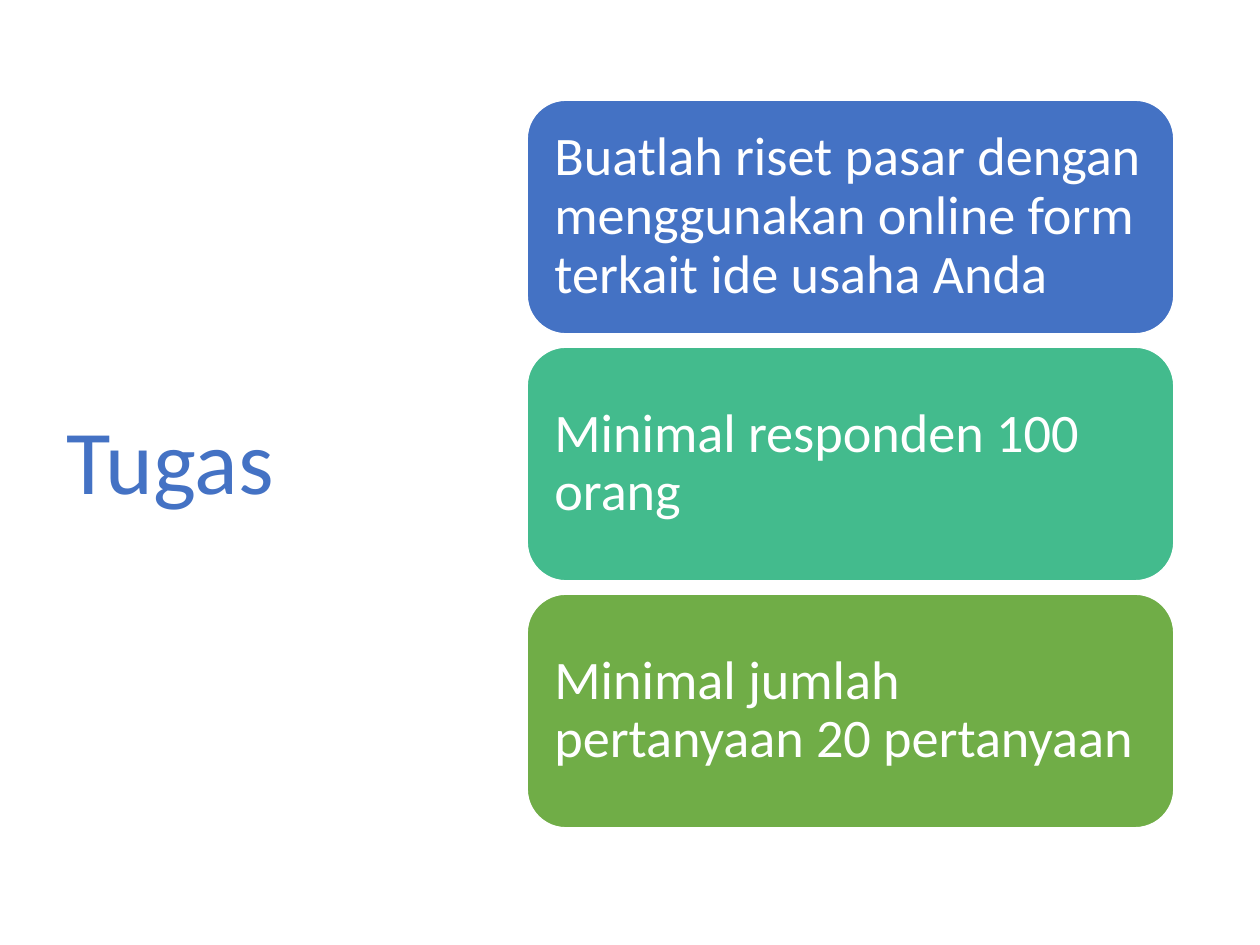
from dataclasses import dataclass
from pptx import Presentation
from pptx.dml.color import RGBColor
from pptx.enum.shapes import MSO_SHAPE
from pptx.enum.text import MSO_ANCHOR, PP_ALIGN
from pptx.util import Emu, Pt

TITLE = "Tugas"
TASKS = [
    ("Buatlah riset pasar dengan menggunakan online form terkait ide usaha Anda", "4472C4"),
    ("Minimal responden 100 orang", "43BB8D"),
    ("Minimal jumlah pertanyaan 20 pertanyaan", "70AD47"),
]


@dataclass(frozen=True)
class Theme:
    font: str = "Calibri"
    title_color: str = "4472C4"
    light: str = "FFFFFF"
    title_size: int = 52
    task_size: int = 31


THEME = Theme()
SLIDE_W, SLIDE_H = 1260, 945
TITLE_BOX = (54, 86, 393, 758)
CARD_X, CARD_Y, CARD_W, CARD_H, CARD_GAP = 527, 100, 647, 234, 13
CARD_INSET, TITLE_INSET = 16, 13


def px(n):
    return Emu(n * 914400 // 126)


def rgb(color):
    return RGBColor.from_string(color)


def write(sp, text, size, color, inset):
    tf = sp.text_frame
    tf.word_wrap = True
    tf.vertical_anchor = MSO_ANCHOR.MIDDLE
    tf.margin_left = tf.margin_right = tf.margin_top = tf.margin_bottom = px(inset)
    p = tf.paragraphs[0]
    p.alignment = PP_ALIGN.LEFT
    p.line_spacing = 0.9
    r = p.add_run()
    r.text = text
    r.font.name = THEME.font
    r.font.size = Pt(size)
    r.font.color.rgb = rgb(color)


def add_card(s, row, text, fill):
    y = CARD_Y + row * (CARD_H + CARD_GAP)
    sp = s.shapes.add_shape(MSO_SHAPE.ROUNDED_RECTANGLE, px(CARD_X), px(y), px(CARD_W), px(CARD_H))
    sp.shadow.inherit = False
    sp.fill.solid()
    sp.fill.fore_color.rgb = rgb(fill)
    sp.line.color.rgb = rgb(THEME.light)
    sp.line.width = Pt(1)
    write(sp, text, THEME.task_size, THEME.light, CARD_INSET)


def main():
    prs = Presentation()
    prs.slide_width, prs.slide_height = px(SLIDE_W), px(SLIDE_H)
    s = prs.slides.add_slide(prs.slide_layouts[6])
    title = s.shapes.add_textbox(*map(px, TITLE_BOX))
    write(title, TITLE, THEME.title_size, THEME.title_color, TITLE_INSET)
    for row, (text, fill) in enumerate(TASKS):
        add_card(s, row, text, fill)
    prs.save("out.pptx")


if __name__ == "__main__":
    main()
